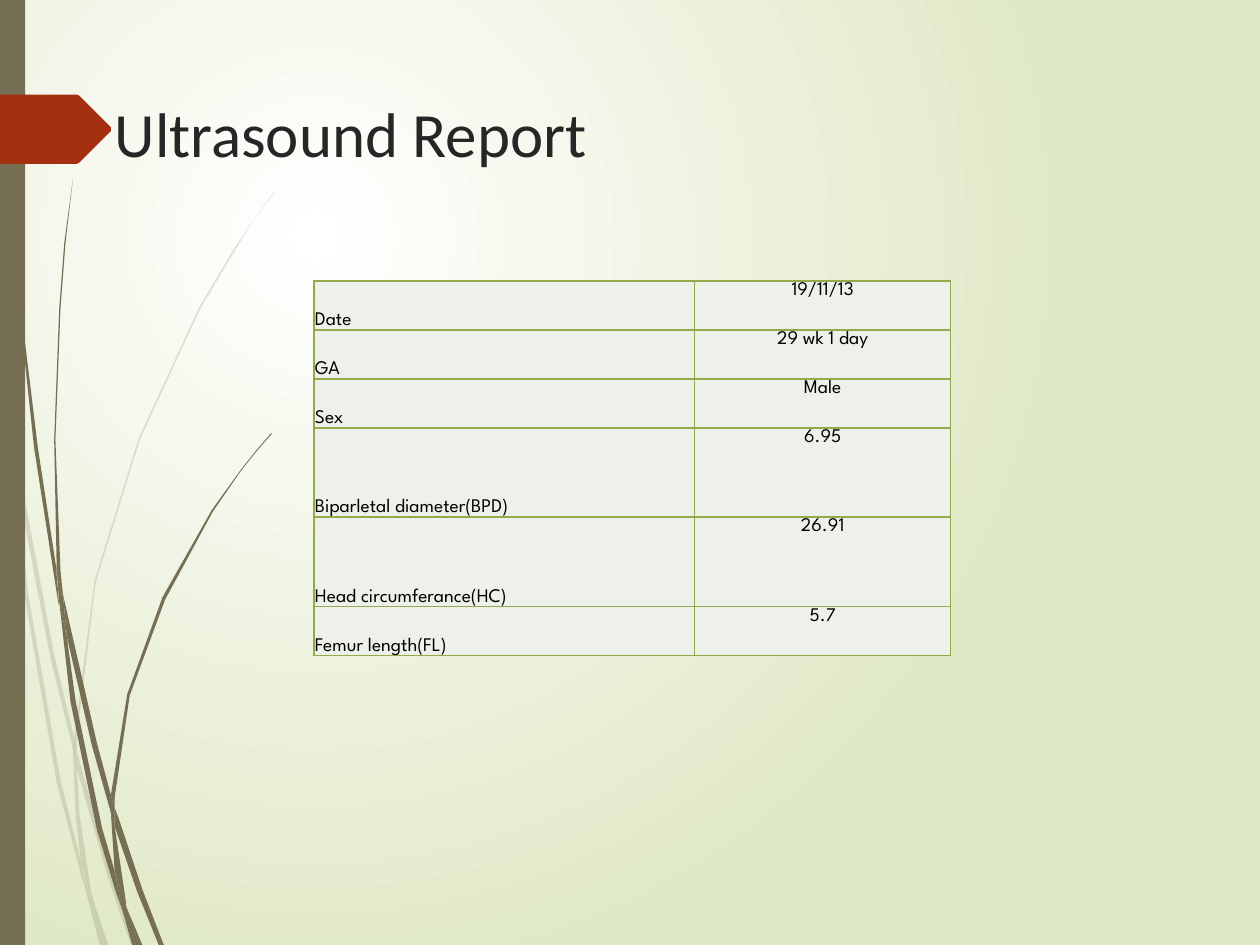
from lxml import etree
from pptx import Presentation
from pptx.dml.color import RGBColor
from pptx.enum.shapes import MSO_SHAPE
from pptx.enum.text import MSO_ANCHOR, PP_ALIGN
from pptx.oxml.ns import qn
from pptx.util import Pt

RECT = MSO_SHAPE.RECTANGLE
TOP, BOTTOM = MSO_ANCHOR.TOP, MSO_ANCHOR.BOTTOM
LEFT, CENTER = PP_ALIGN.LEFT, PP_ALIGN.CENTER

COLORS = {
    "white": "FFFFFF", "lime": "DFE8C4", "stem": "766F54", "tag": "A53010",
    "title": "262626", "text": "000000", "cell": "EEF1E9", "edge": "92AA4C",
}
UNIT = Pt(0.72)

PALE = [
    [(8, 350), (6, 322), (0, 282), (0, 299), (7, 344)],
    [(40, 522), (59, 599), (59, 586), (43, 520), (10, 345), (12, 376)],
    [(64, 607), (61, 596), (61, 610), (85, 694), (104, 750), (108, 750), (88, 692)],
    [(83, 750), (86, 750), (73, 711)],
    [(64, 683), (48, 619), (22, 469), (12, 376), (8, 350), (19, 470), (45, 621),
     (64, 693), (70, 714), (69, 707)],
    [(58, 599), (60, 646), (64, 683), (67, 692), (73, 711), (72, 706), (63, 646),
     (61, 610), (61, 608)],
    [(61, 584), (76, 462), (111, 349), (159, 245), (187, 198), (201, 175), (217, 154),
     (217, 153), (201, 175), (186, 197), (158, 244), (110, 348), (75, 461), (59, 584),
     (59, 586), (61, 596)],
    [(70, 714), (79, 750), (82, 750)],
    [(61, 608), (61, 610), (61, 596), (59, 586), (58, 599)],
    [(67, 692), (65, 683), (69, 707), (70, 714), (82, 750), (83, 750), (73, 711)],
]
DARK = [
    [(5, 110), (14, 233), (27, 355), (46, 477), (47, 481), (45, 457), (45, 453),
     (30, 355), (15, 232), (6, 109), (4, 48), (3, 0), (2, 0), (3, 48)],
    [(73, 592), (88, 645), (88, 633), (88, 631), (77, 590), (50, 472), (53, 505)],
    [(94, 649), (91, 641), (91, 656), (109, 708), (126, 750), (130, 750), (113, 706)],
    [(91, 691), (81, 657), (60, 556), (53, 505), (47, 477), (56, 557), (77, 659),
     (92, 708), (97, 722), (96, 717)],
    [(50, 472), (48, 453), (44, 349), (48, 245), (52, 193), (58, 141), (51, 193),
     (47, 245), (43, 349), (45, 449), (49, 472)],
    [(110, 750), (113, 750), (100, 719)],
    [(47, 477), (53, 505), (50, 472), (49, 472), (45, 449), (45, 453)],
    [(91, 633), (103, 552), (131, 476), (169, 406), (191, 374), (203, 359), (216, 344),
     (215, 344), (203, 358), (191, 373), (168, 405), (129, 474), (101, 551), (88, 631),
     (91, 641)],
    [(97, 722), (105, 750), (108, 750)],
    [(88, 645), (91, 691), (96, 706), (100, 719), (100, 716), (91, 656), (90, 651)],
    [(88, 645), (90, 651), (91, 656), (91, 641), (88, 631), (88, 633)],
    [(96, 706), (91, 691), (96, 717), (97, 722), (108, 750), (110, 750), (100, 719)],
]
ARROW = [(88, 104), (63, 129), (61, 130), (-61, 130), (-61, 75), (61, 75), (63, 76),
         (88, 101)]

ROWS = [
    ("Date", "19/11/13", 28),
    ("GA", "29 wk 1 day", 28),
    ("Sex", "Male", 28),
    ("Biparletal diameter(BPD)", "6.95", 51),
    ("Head circumferance(HC)", "26.91", 51),
    ("Femur length(FL)", "5.7", 28),
]


def tint(name):
    return RGBColor.from_string(COLORS[name])


class Deck:
    head, body = "Calibri", "League Spartan"

    def __init__(self, prs):
        self.slide = prs.slides.add_slide(prs.slide_layouts[5])
        self.shapes = self.slide.shapes

    def ground(self):
        fill = self.slide.background.fill
        fill.gradient()
        for stop, name, pos in zip(fill.gradient_stops, ("white", "lime"), (0, 1)):
            stop.color.rgb = tint(name)
            stop.position = pos
        grad = self.slide.element.xpath(".//p:bg//a:gradFill")[0]
        for lin in grad.findall(qn("a:lin")):
            grad.remove(lin)
        ring = etree.Element(qn("a:path"), path="circle")
        etree.SubElement(ring, qn("a:fillToRect"), l="50000", t="50000",
                         r="100000", b="100000")
        grad.find(qn("a:gsLst")).addnext(ring)

    def paint(self, shape, name, alpha=100):
        shape.shadow.inherit = False
        shape.line.fill.background()
        shape.fill.solid()
        shape.fill.fore_color.rgb = tint(name)
        if alpha < 100:
            color = shape.element.spPr.find(qn("a:solidFill"))[0]
            etree.SubElement(color, qn("a:alpha"), val=str(alpha * 1000))

    def blade(self, points, name, alpha=100):
        pen = self.shapes.build_freeform(*points[0], scale=UNIT)
        pen.add_line_segments(points[1:], close=True)
        self.paint(pen.convert_to_shape(), name, alpha)

    def bar(self, left, top, width, height, name):
        box = self.shapes.add_shape(RECT, Pt(left), Pt(top), Pt(width), Pt(height))
        self.paint(box, name)

    def label(self, frame, text, font, size, name, align):
        para = frame.paragraphs[0]
        para.alignment = align
        run = para.add_run()
        run.text = text
        run.font.name = font
        run.font.size = Pt(size)
        run.font.bold = False
        run.font.color.rgb = tint(name)

    def title(self, text, left, top, width, height):
        box = self.shapes.title
        box.left, box.top, box.width, box.height = map(Pt, (left, top, width, height))
        frame = box.text_frame
        frame.word_wrap = True
        frame.vertical_anchor = TOP
        frame.margin_top = Pt(5)
        self.label(frame, text, self.head, 36, "title", LEFT)

    def edges(self, cell):
        props = cell._tc.get_or_add_tcPr()
        for spot, side in enumerate(("a:lnL", "a:lnR", "a:lnT", "a:lnB")):
            line = etree.Element(qn(side), w=str(Pt(1)))
            fill = etree.SubElement(line, qn("a:solidFill"))
            etree.SubElement(fill, qn("a:srgbClr"), val=COLORS["edge"])
            props.insert(spot, line)

    def cell(self, cell, text, align, anchor):
        cell.margin_left = cell.margin_right = cell.margin_top = Pt(0.7)
        cell.margin_bottom = Pt(0)
        cell.vertical_anchor = anchor
        cell.fill.solid()
        cell.fill.fore_color.rgb = tint("cell")
        self.edges(cell)
        self.label(cell.text_frame, text, self.body, 11, "text", align)

    def table(self, rows, left, top, widths):
        high = sum(row[-1] for row in rows)
        grid = self.shapes.add_table(len(rows), len(widths), Pt(left), Pt(top),
                                     Pt(sum(widths)), Pt(high)).table
        grid.first_row = grid.horz_banding = False
        for col, width in zip(grid.columns, widths):
            col.width = Pt(width)
        for i, (name, value, height) in enumerate(rows):
            grid.rows[i].height = Pt(height)
            self.cell(grid.cell(i, 0), name, LEFT, BOTTOM)
            self.cell(grid.cell(i, 1), value, CENTER, TOP)


def main():
    prs = Presentation()
    prs.slide_width, prs.slide_height = Pt(720), Pt(540)
    deck = Deck(prs)
    deck.ground()
    for points in PALE:
        deck.blade(points, "stem", 20)
    for points in DARK:
        deck.blade(points, "stem")
    deck.bar(0, 0, 14.4, 540, "stem")
    deck.blade(ARROW, "tag")
    deck.title("Ultrasound Report", 58.3, 49, 653, 95.8)
    deck.table(ROWS, 179.3, 160.6, (217.7, 146.3))
    prs.save("out.pptx")


if __name__ == "__main__":
    main()
